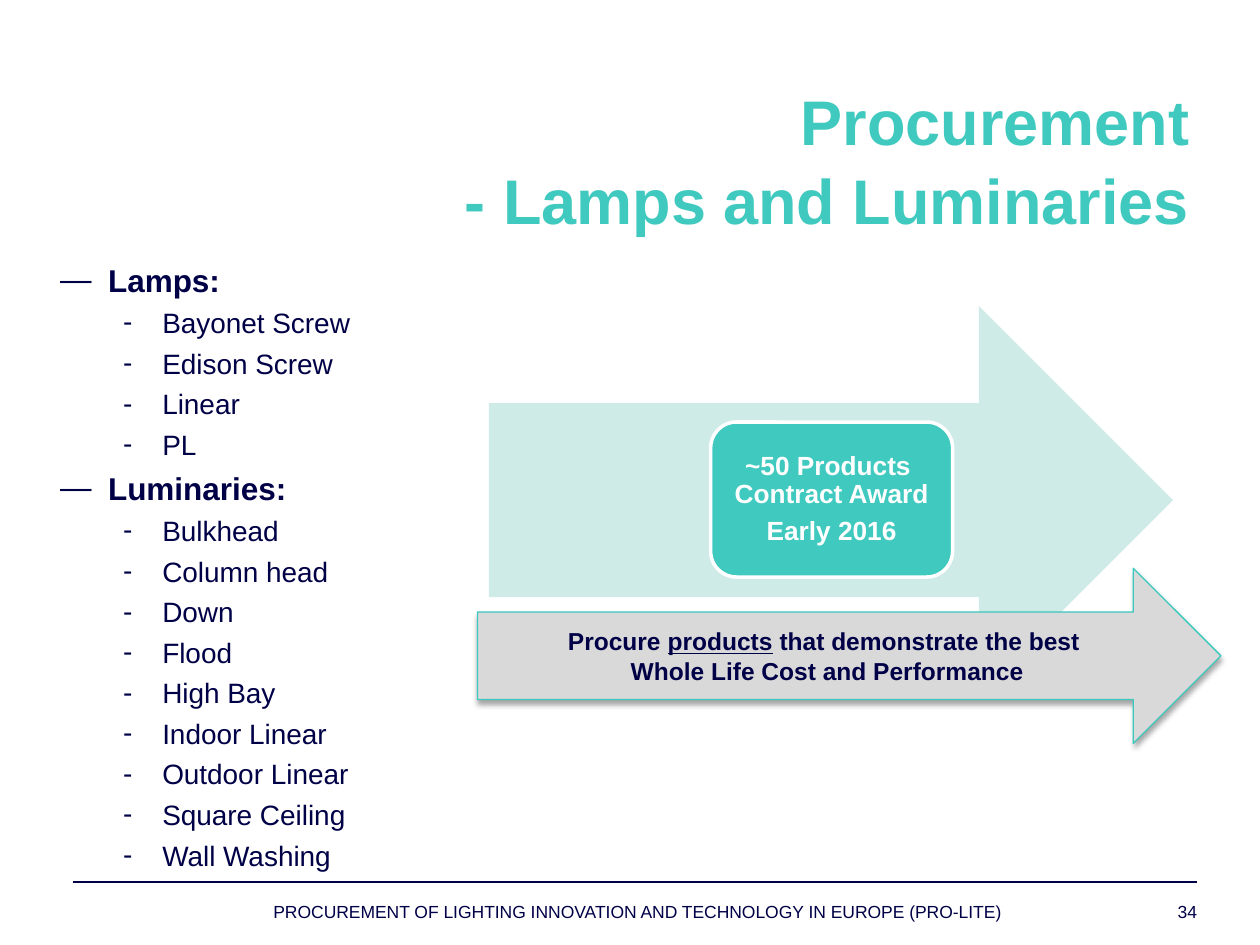
import pptx
import pptx.util
import pptx.dml.color
import pptx.enum.shapes
import pptx.enum.text
import pptx.oxml
import pptx.oxml.ns
from pptx.util import Inches, Pt

COLOURS = {"navy": "000047", "teal": "40C9BF", "pale": "CFEBE8",
           "edge": "3BC8BE", "grey": "D9D9D9", "white": "FFFFFF"}
SHAPES = pptx.enum.shapes.MSO_SHAPE
ALIGN = pptx.enum.text.PP_ALIGN
ANCHOR = pptx.enum.text.MSO_ANCHOR
DRAWING = 'xmlns:a="http://schemas.openxmlformats.org/drawingml/2006/main"'


def colour(name):
    return pptx.dml.color.RGBColor.from_string(COLOURS[name])


def format_runs(para, size, name, bold=False):
    for span in para.runs:
        span.font.name = "Arial"
        span.font.size = Pt(size)
        span.font.bold = bold
        span.font.color.rgb = colour(name)


deck = pptx.Presentation()
deck.slide_width, deck.slide_height = Inches(10), Inches(7.5)
page = deck.slides.add_slide(deck.slide_layouts[5])

# Footer rule
rule = page.shapes.add_connector(pptx.enum.shapes.MSO_CONNECTOR.STRAIGHT,
                                 Inches(0.58), Inches(7), Inches(9.5), Inches(7))
rule.line.color.rgb = colour("navy")
rule.line.width = Pt(1)
rule._element.spPr.append(pptx.oxml.parse_xml(f"<a:effectLst {DRAWING}/>"))

# Title
title = page.shapes.title
title.left, title.top = Inches(0.53), Inches(0.62)
title.width, title.height = Inches(9.01), Inches(1.31)
title.text_frame.text = "Procurement\n- Lamps and Luminaries"
title.text_frame.vertical_anchor = ANCHOR.BOTTOM
title.text_frame.auto_size = pptx.enum.text.MSO_AUTO_SIZE.NONE
for para in title.text_frame.paragraphs:
    para.alignment = ALIGN.RIGHT
    format_runs(para, 36, "teal", True)
title.text_frame.paragraphs[1].space_before = Pt(2)

# Product list
products = {
    "Lamps:": ["Bayonet Screw", "Edison Screw", "Linear", "PL"],
    "Luminaries:": ["Bulkhead", "Column head", "Down", "Flood", "High Bay",
                    "Indoor Linear", "Outdoor Linear", "Square Ceiling", "Wall Washing"],
}
entries = []
for heading, items in products.items():
    entries.append((heading, 0))
    entries += [(item, 1) for item in items]
# level: margin, hanging indent, bullet, size, space before
levels = [(0.38, -0.38, "—", 18, 4.5), (0.81, -0.31, "-", 16, 4)]

box = page.shapes.add_textbox(Inches(0.38), Inches(2.02), Inches(9.3), Inches(3.78))
box.text_frame.word_wrap = True
box.text_frame.text = "\n".join(text for text, level in entries)
for index, (para, (text, level)) in enumerate(zip(box.text_frame.paragraphs, entries)):
    margin, indent, bullet, size, gap = levels[level]
    para.level = level
    if index:
        para.space_before = Pt(gap)
    properties = para._p.get_or_add_pPr()
    properties.set("marL", str(Inches(margin)))
    properties.set("indent", str(Inches(indent)))
    properties.append(pptx.oxml.parse_xml(f'<a:buFont {DRAWING} typeface="Arial"/>'))
    properties.append(pptx.oxml.parse_xml(f'<a:buChar {DRAWING} char="{bullet}"/>'))
    format_runs(para, size, "navy", level == 0)

# Footer text and page number
for left, width, text, align in [
    (2.17, 6.17, "PROCUREMENT OF LIGHTING INNOVATION AND TECHNOLOGY IN EUROPE (PRO-LITE)",
     ALIGN.LEFT),
    (8.5, 1, "34", ALIGN.RIGHT),
]:
    box = page.shapes.add_textbox(Inches(left), Inches(7.15), Inches(width), Inches(0.35))
    frame = box.text_frame
    frame.word_wrap = True
    frame.margin_left = frame.margin_right = frame.margin_top = frame.margin_bottom = 0
    frame.text = text
    frame.paragraphs[0].alignment = align
    format_runs(frame.paragraphs[0], 10, "navy")

# Arrows and milestone card
shapes = []
for kind, left, top, width, height, fill, edge, weight in [
    (SHAPES.RIGHT_ARROW, 3.88, 2.43, 5.43, 3.08, "pale", None, 0),
    (SHAPES.ROUNDED_RECTANGLE, 5.64, 3.35, 1.92, 1.23, "teal", "white", 2),
    (SHAPES.RIGHT_ARROW, 3.79, 4.51, 5.9, 1.39, "grey", "edge", 0.75),
]:
    shape = page.shapes.add_shape(kind, Inches(left), Inches(top),
                                  Inches(width), Inches(height))
    shape.shadow.inherit = False
    shape.fill.solid()
    shape.fill.fore_color.rgb = colour(fill)
    if edge:
        shape.line.color.rgb = colour(edge)
        shape.line.width = Pt(weight)
    else:
        shape.line.fill.background()
    shape.text_frame.vertical_anchor = ANCHOR.MIDDLE
    shapes.append(shape)
timeline, card, goal = shapes

# Milestone text
frame = card.text_frame
frame.margin_left = frame.margin_right = Inches(0.06)
frame.margin_top = frame.margin_bottom = Inches(0.06)
frame.text = "~50 Products \vContract Award\nEarly 2016"
for para in frame.paragraphs:
    para.alignment = ALIGN.CENTER
    para.line_spacing = 0.9
    para.space_after = Pt(5.25)
    format_runs(para, 15, "white", True)

# Goal text, with one word underlined
frame = goal.text_frame
frame.text = "Procure \nWhole Life Cost and Performance"
first = frame.paragraphs[0]
for text in ["products", " that demonstrate the best "]:
    first.add_run().text = text
for para in frame.paragraphs:
    para.alignment = ALIGN.CENTER
    format_runs(para, 14, "navy", True)
first.runs[1].font.underline = True

# Goal shadow
effects = goal._element.spPr.find(pptx.oxml.ns.qn("a:effectLst"))
effects.append(pptx.oxml.parse_xml(
    f'<a:outerShdw {DRAWING} blurRad="{Pt(3.1)}" dist="{Pt(1.8)}" dir="5400000" '
    'rotWithShape="0"><a:srgbClr val="000000"><a:alpha val="35000"/></a:srgbClr>'
    '</a:outerShdw>'))

deck.save("out.pptx")
